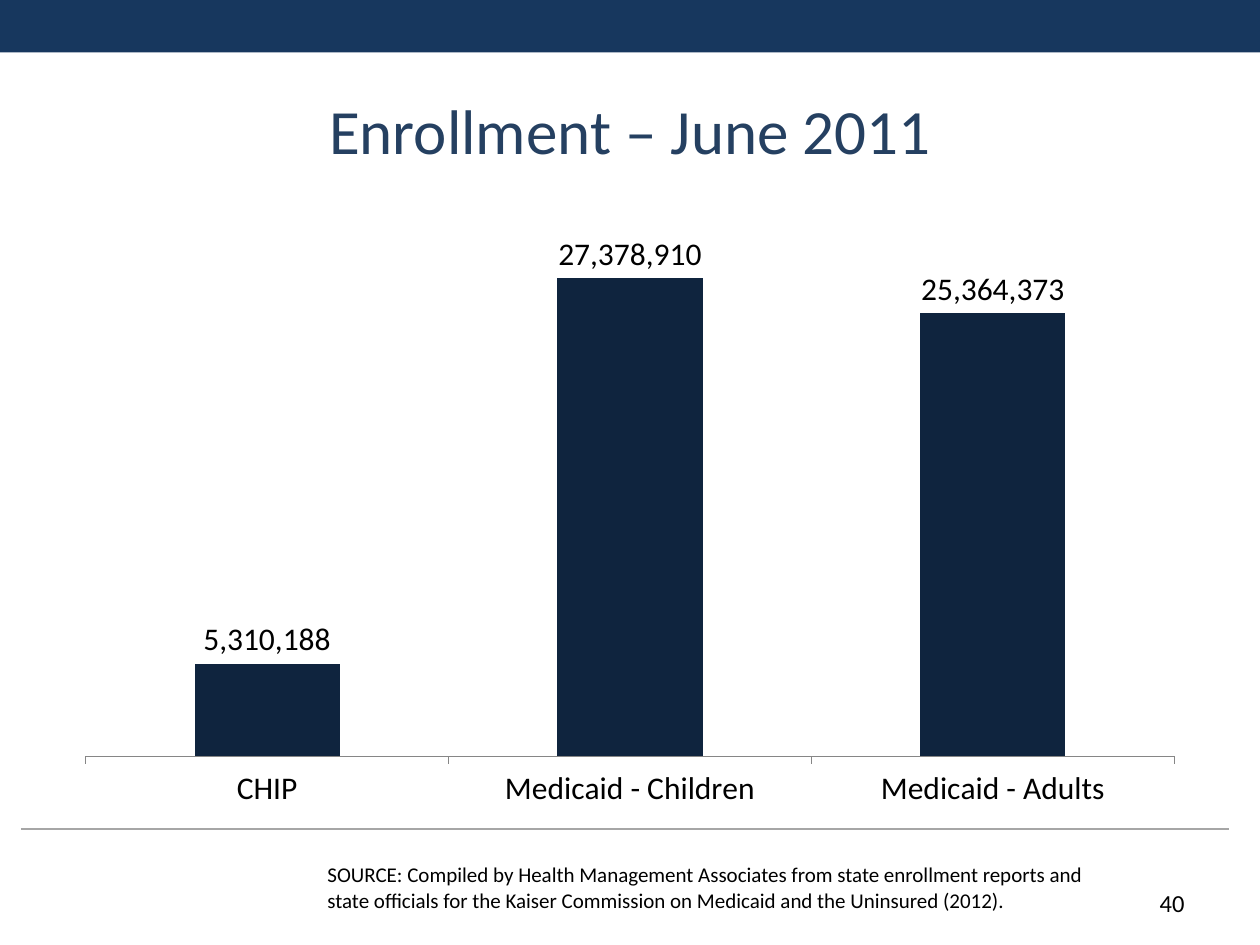
from dataclasses import dataclass

from pptx import Presentation
from pptx.chart.data import CategoryChartData
from pptx.dml.color import RGBColor
from pptx.enum import chart as ch, shapes, text
from pptx.oxml.ns import qn
from pptx.util import Pt
from lxml import etree

NAVY = RGBColor(0x17, 0x37, 0x5E)
TITLE_BLUE = RGBColor(0x25, 0x40, 0x61)
BAR_BLUE = RGBColor(0x0F, 0x24, 0x3E)
RULE_GREY = RGBColor(0xA6, 0xA6, 0xA6)
AXIS_GREY = RGBColor(0x86, 0x86, 0x86)
BLACK = RGBColor(0, 0, 0)
FONT = "Calibri"
NUMBER_FORMAT = "#,##0"

ENROLLMENT = {
    "CHIP": 5310188,
    "Medicaid - Children": 27378910,
    "Medicaid - Adults": 25364373,
}


@dataclass
class Note:
    words: str
    left: float
    top: float
    width: float
    height: float
    size: float
    align: text.PP_ALIGN


NOTES = [
    Note("40", 516, 504, 168, 28.8, 14, text.PP_ALIGN.RIGHT),
    Note("SOURCE: Compiled by Health Management Associates from state enrollment "
         "reports and state officials for the Kaiser Commission on Medicaid and "
         "the Uninsured (2012).", 180, 489, 456, 36, 12, text.PP_ALIGN.LEFT),
]


def set_font(font, size: float, color: RGBColor) -> None:
    for name, value in {"name": FONT, "size": Pt(size), "bold": False}.items():
        setattr(font, name, value)
    font.color.rgb = color


def place(item, left: float, top: float, width: float, height: float) -> None:
    frame = {"left": left, "top": top, "width": width, "height": height}
    for name, value in frame.items():
        setattr(item, name, Pt(value))


def add_band(page) -> None:
    band = page.shapes.add_shape(
        shapes.MSO_SHAPE.RECTANGLE, 0, 0, Pt(720), Pt(30))
    band.shadow.inherit = False
    band.fill.solid()
    band.fill.fore_color.rgb = NAVY
    band.line.fill.background()


def add_rule(page) -> None:
    rule = page.shapes.add_connector(
        shapes.MSO_CONNECTOR.STRAIGHT, Pt(12), Pt(473.75), Pt(702), Pt(473.75))
    rule.line.color.rgb = RULE_GREY
    rule.line.width = Pt(0.75)
    etree.SubElement(rule.line._get_or_add_ln().getparent(), qn("a:effectLst"))


def add_title(page, words: str) -> None:
    title = page.shapes.title
    place(title, 36, 36, 648, 75.6)
    title.text_frame.text = words
    title.text_frame.vertical_anchor = text.MSO_ANCHOR.MIDDLE
    para = title.text_frame.paragraphs[0]
    para.alignment = text.PP_ALIGN.CENTER
    set_font(para.runs[0].font, 36, TITLE_BLUE)


def add_enrollment_chart(page) -> None:
    data = CategoryChartData(number_format=NUMBER_FORMAT)
    data.categories = list(ENROLLMENT)
    data.add_series("Series 1", list(ENROLLMENT.values()))
    chart = page.shapes.add_chart(
        ch.XL_CHART_TYPE.COLUMN_CLUSTERED,
        Pt(36), Pt(126), Pt(648), Pt(342), data).chart
    chart.has_legend = False
    chart.has_title = False
    set_font(chart.font, 18, BLACK)

    # Axes
    values = chart.value_axis
    axis_format = {"visible": False, "has_major_gridlines": False,
                   "minimum_scale": 0, "maximum_scale": 30_000_000}
    for name, value in axis_format.items():
        setattr(values, name, value)
    categories = chart.category_axis
    categories.major_tick_mark = ch.XL_TICK_MARK.OUTSIDE
    categories.format.line.color.rgb = AXIS_GREY
    categories.format.line.width = Pt(0.75)

    # Bars and their labels
    plot = chart.plots[0]
    plot.gap_width = 150
    plot.vary_by_categories = False
    bars = plot.series[0]
    bars.format.fill.solid()
    bars.format.fill.fore_color.rgb = BAR_BLUE
    label_format = {"show_value": True, "number_format": NUMBER_FORMAT,
                    "number_format_is_linked": False,
                    "position": ch.XL_LABEL_POSITION.OUTSIDE_END}
    for name, value in label_format.items():
        setattr(bars.data_labels, name, value)
    set_font(bars.data_labels.font, 18, BLACK)


def add_note(page, note: Note) -> None:
    box = page.shapes.add_textbox(
        Pt(note.left), Pt(note.top), Pt(note.width), Pt(note.height))
    box.text_frame.word_wrap = True
    para = box.text_frame.paragraphs[0]
    para.alignment = note.align
    span = para.add_run()
    span.text = note.words
    set_font(span.font, note.size, BLACK)


def main() -> None:
    deck = Presentation()
    deck.slide_width, deck.slide_height = Pt(720), Pt(540)
    page = deck.slides.add_slide(deck.slide_layouts[5])
    add_band(page)
    add_rule(page)
    add_title(page, "Enrollment – June 2011")
    add_enrollment_chart(page)
    for note in NOTES:
        add_note(page, note)
    deck.save("out.pptx")


if __name__ == "__main__":
    main()
